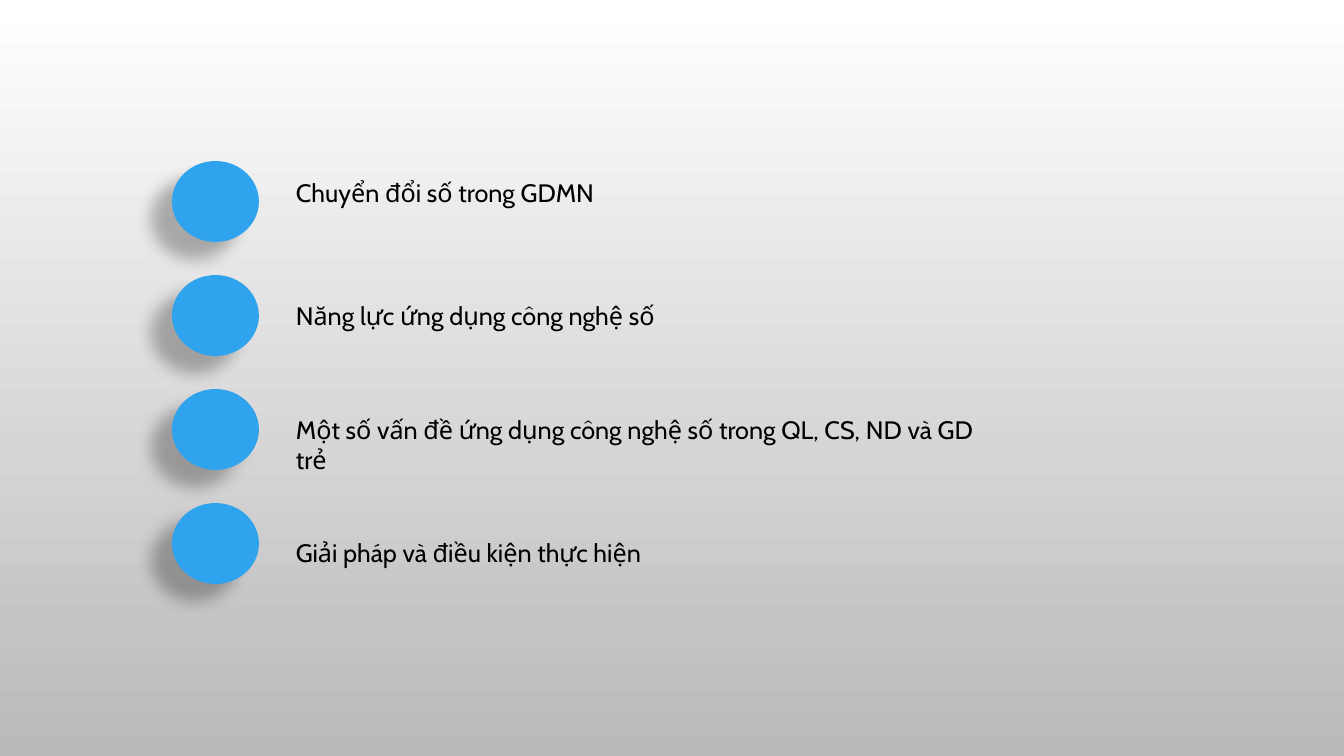
from lxml import etree
from pptx import Presentation
from pptx.dml.color import RGBColor
from pptx.enum.shapes import MSO_SHAPE
from pptx.enum.text import MSO_AUTO_SIZE
from pptx.oxml.ns import qn
from pptx.util import Pt

EMU_PER_PX = 914400 / 100.8
SLIDE_WIDTH, SLIDE_HEIGHT = 1344, 756

ELLIPSE = MSO_SHAPE.OVAL
GROW = MSO_AUTO_SIZE.SHAPE_TO_FIT_TEXT

WHITE = RGBColor(0xFF, 0xFF, 0xFF)
GREY = RGBColor(0xB9, 0xB9, 0xB9)
BLUE = RGBColor(0x2F, 0xA3, 0xEE)
BLACK = RGBColor(0, 0, 0)

TOPIC_FONT = {"name": "Cabin", "size": Pt(18)}
BULLET_SHADOW = {"blurRad": Pt(11.8), "dist": Pt(19.7), "dir": 141 * 60000,
                 "algn": "ctr", "rotWithShape": 0}
SHADOW_OPACITY = 28

BULLET_WIDTH, BULLET_HEIGHT = 87, 81
TOPIC_INDENT, TOPIC_HEIGHT = 114, 40
ROW_PITCH = 114

# Wording, drop of the text below the top of its row, width of the text
TOPICS = [
    ("Chuyển đổi số trong GDMN", 11, 628),
    ("Năng lực ứng dụng công nghệ số", 20, 628),
    ("Một số vấn đề ứng dụng công nghệ số trong QL, CS, ND và GD trẻ", 20, 719),
    ("Giải pháp và điều kiện thực hiện", 29, 719),
]


def px(*lengths):
    """Turn pixel lengths into EMU."""
    return [round(length * EMU_PER_PX) for length in lengths]


def paint_background(page):
    fill = page.background.fill
    fill.gradient()
    fill.gradient_angle = 270
    for stop, position, color in zip(fill.gradient_stops, (0, 1), (WHITE, GREY)):
        stop.position = position
        stop.color.rgb = color


def add_shadow(shape):
    shape.shadow.inherit = False
    effects = shape._element.spPr.find(qn("a:effectLst"))
    shadow = etree.SubElement(effects, qn("a:outerShdw"))
    for name, value in BULLET_SHADOW.items():
        shadow.set(name, str(value))
    color = etree.SubElement(shadow, qn("a:srgbClr"), val=str(BLACK))
    etree.SubElement(color, qn("a:alpha"), val=str(SHADOW_OPACITY * 1000))


def add_bullet(page, left, top):
    bullet = page.shapes.add_shape(ELLIPSE, *px(left, top, BULLET_WIDTH, BULLET_HEIGHT))
    bullet.fill.solid()
    bullet.fill.fore_color.rgb = BLUE
    bullet.line.fill.background()
    add_shadow(bullet)


def add_topic(page, left, top, width, wording):
    box = page.shapes.add_textbox(*px(left, top, width, TOPIC_HEIGHT))
    box.text_frame.word_wrap = True
    box.text_frame.auto_size = GROW
    span = box.text_frame.paragraphs[0].add_run()
    span.text = wording
    for name, value in TOPIC_FONT.items():
        setattr(span.font, name, value)
    span.font.color.rgb = BLACK


def add_agenda(page, left, top):
    for row, (wording, drop, width) in enumerate(TOPICS):
        row_top = top + row * ROW_PITCH
        add_bullet(page, left, row_top)
        add_topic(page, left + TOPIC_INDENT, row_top + drop, width, wording)


def main():
    deck = Presentation()
    deck.slide_width, deck.slide_height = px(SLIDE_WIDTH, SLIDE_HEIGHT)
    page = deck.slides.add_slide(deck.slide_layouts[6])
    paint_background(page)
    add_agenda(page, 172, 161)
    deck.save("out.pptx")


if __name__ == "__main__":
    main()
